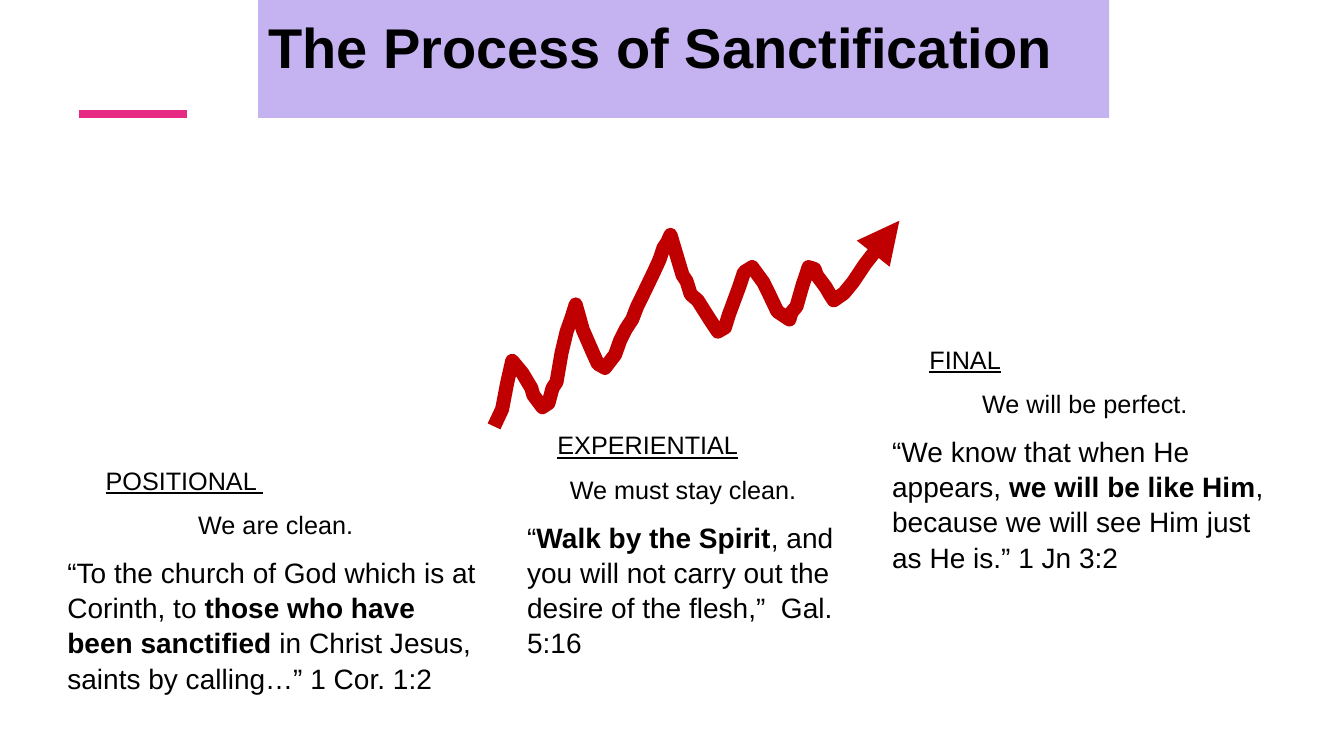
from lxml import etree
from pptx import Presentation
from pptx.dml.color import RGBColor
from pptx.enum.shapes import MSO_CONNECTOR
from pptx.enum.text import MSO_ANCHOR, MSO_AUTO_SIZE, PP_ALIGN
from pptx.oxml.ns import qn
from pptx.util import Pt

PX = 9144
FONT = "Arial"
BLACK = RGBColor(0x00, 0x00, 0x00)
PINK = RGBColor(0xE7, 0x29, 0x83)
PURPLE = RGBColor(0x57, 0x25, 0xD7)
RED = RGBColor(0xC0, 0x00, 0x00)
STRAIGHT = MSO_CONNECTOR.STRAIGHT
TOP = MSO_ANCHOR.TOP
NO_FIT = MSO_AUTO_SIZE.NONE
LEFT, CENTER = PP_ALIGN.LEFT, PP_ALIGN.CENTER

STAGES = [
    ((57, 455, 433, 237), 38, "POSITIONAL ", "We are clean.",
     ("“To the church of God which is at Corinth, to ",
      "those who have been sanctified",
      " in Christ Jesus, saints by calling…” 1 Cor. 1:2")),
    ((513, 420, 329, 237), 30, "EXPERIENTIAL", "We must stay clean.",
     ("“", "Walk by the Spirit",
      ", and you will not carry out the desire of the flesh,”  Gal. 5:16")),
    ((875, 335, 402, 237), 37, "FINAL", "We will be perfect.",
     ("“We know that when He appears, ", "we will be like Him",
      ", because we will see Him just as He is.” 1 Jn 3:2")),
]

GROWTH = [
    (490, 423), (498, 406), (503, 380), (508, 358), (518, 370), (527, 385),
    (529, 392), (538, 404), (544, 400), (548, 385), (552, 379), (557, 350),
    (562, 329), (567, 315), (571, 302), (578, 327), (588, 350), (593, 361),
    (600, 365), (610, 352), (615, 338), (621, 326), (627, 317), (632, 304),
    (635, 298), (648, 271), (654, 258), (658, 246), (662, 240), (665, 233),
    (677, 273), (681, 279), (685, 292), (692, 298), (704, 317), (708, 323),
    (712, 329), (719, 325), (723, 312), (733, 285), (738, 270), (746, 265),
    (757, 280), (762, 290), (771, 309), (783, 317), (785, 310), (790, 304),
    (796, 283), (800, 271), (802, 265), (808, 267), (810, 273), (819, 285),
    (823, 292), (827, 298), (837, 291), (846, 280), (858, 262), (876, 239),
    (892, 219),
]


def px(*lengths):
    return [n * PX for n in lengths]


def style(p, size, align):
    p.alignment = align
    p.font.name = FONT
    p.font.size = Pt(size)
    p.font.color.rgb = BLACK


def add_title(s, box):
    sp = s.shapes.title
    sp.left, sp.top, sp.width, sp.height = px(*box)
    sp.fill.solid()
    sp.fill.fore_color.rgb = PURPLE
    color = sp._element.spPr.find(qn("a:solidFill"))[0]
    etree.SubElement(color, qn("a:alpha"), val="35000")
    tf = sp.text_frame
    tf.auto_size = NO_FIT
    tf.vertical_anchor = TOP
    tf.margin_top = 12 * PX
    tf.text = "The Process of Sanctification"
    style(tf.paragraphs[0], 40, LEFT)
    tf.paragraphs[0].font.bold = True


def add_accent(s, x, y, width):
    line = s.shapes.add_connector(STRAIGHT, *px(x, y, x + width, y))
    line.line.color.rgb = PINK
    line.line.width = Pt(6)
    etree.SubElement(line._element.spPr, qn("a:effectLst"))


def add_stage(s, box, indent, name, summary, verse):
    tf = s.shapes.add_textbox(*px(*box)).text_frame
    tf.word_wrap = True
    heading, claim, quote = tf.paragraphs[0], tf.add_paragraph(), tf.add_paragraph()
    heading.text = name
    claim.text = summary
    for i, text in enumerate(verse):
        r = quote.add_run()
        r.text = text
        r.font.bold = i == 1
    for p, size, align in ((heading, 18, LEFT), (claim, 18, CENTER), (quote, 20, LEFT)):
        style(p, size, align)
        p.space_before = Pt(size / 2)
        p.line_spacing = 1.05
    heading.font.underline = True
    heading._p.get_or_add_pPr().set("marL", str(indent * PX))


def add_growth(s, points):
    path = s.shapes.build_freeform(*points[0], scale=PX)
    path.add_line_segments(points[1:], close=False)
    sp = path.convert_to_shape()
    sp.shadow.inherit = False
    sp.fill.background()
    sp.line.color.rgb = RED
    sp.line.width = Pt(10)
    ln = sp._element.spPr.find(qn("a:ln"))
    etree.SubElement(ln, qn("a:round"))
    etree.SubElement(ln, qn("a:tailEnd"), type="triangle")


def main():
    prs = Presentation()
    prs.slide_width, prs.slide_height = px(1333, 750)
    s = prs.slides.add_slide(prs.slide_layouts[5])
    add_title(s, (256, 0, 844, 117))
    add_accent(s, 78, 113, 107)
    for stage in STAGES:
        add_stage(s, *stage)
    add_growth(s, GROWTH)
    prs.save("out.pptx")


if __name__ == "__main__":
    main()
